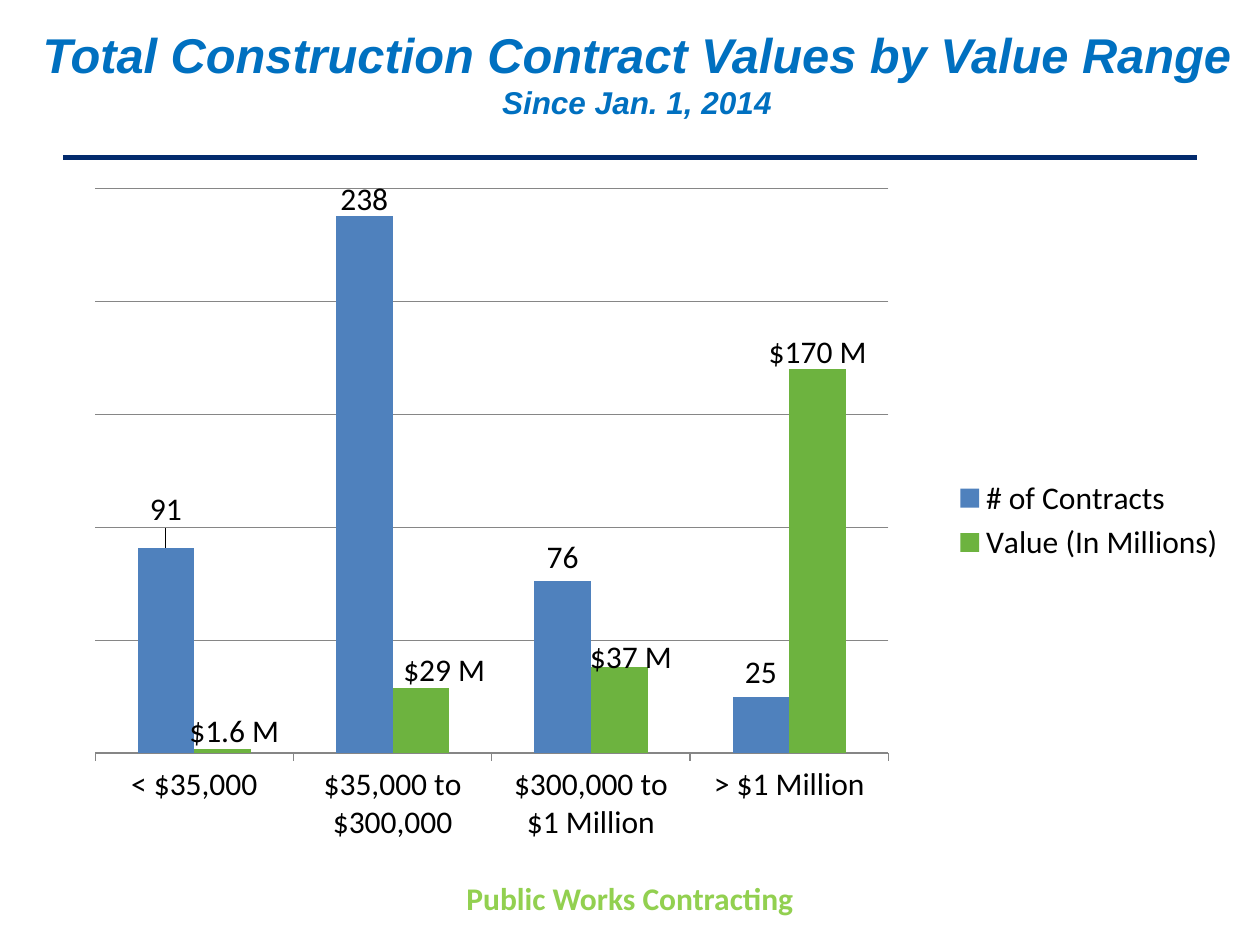
from lxml.etree import SubElement
from pptx import Presentation
from pptx.chart.data import CategoryChartData
from pptx.dml.color import RGBColor
from pptx.enum.chart import XL_CHART_TYPE, XL_LABEL_POSITION, XL_LEGEND_POSITION, XL_TICK_LABEL_POSITION, XL_TICK_MARK
from pptx.enum.shapes import MSO_CONNECTOR
from pptx.enum.text import MSO_ANCHOR, PP_ALIGN
from pptx.oxml.ns import qn
from pptx.util import Inches, Pt

CATEGORIES = ["< $35,000", "$35,000 to $300,000", "$300,000 to $1 Million", "> $1 Million"]
# Each label: text, horizontal and vertical shift as a share of the chart
SERIES = [
    ("# of Contracts", "4F81BD", [91, 238, 76, 25],
     [("91", 0, -0.02), ("238", 0, 0.01), ("76", 0, 0), ("25", 0, 0)]),
    ("Value (In Millions)", "6DB33F", [2, 29, 38, 170],
     [("$1.6 M", 0.01, 0.01), ("$29 M", 0.02, 0.01), ("$37 M", 0.01, 0.02), ("$170 M", 0, 0.01)]),
]


def rgb(value):
    return RGBColor.from_string(value)


def manual_layout(layout, **values):
    """Fill a c:layout element with manual positions."""
    manual = SubElement(layout, qn("c:manualLayout"))
    for tag, value in values.items():
        SubElement(manual, qn(f"c:{tag}")).set("val", str(value))


class SlideBuilder:
    TITLE = dict(name="Arial", size=Pt(27.9), bold=True, italic=True, color="0070C0")
    SUBTITLE = {**TITLE, "size": Pt(18)}
    FOOTER = dict(name="Calibri", size=Pt(18), bold=True, color="92D050")
    CHART = dict(name="Calibri", size=Pt(18), bold=False, color="000000")
    RULE, AXIS = "032B6D", "868686"

    def __init__(self, slide):
        self.s = slide

    def style(self, font, fmt):
        for key, value in fmt.items():
            if key == "color":
                font.color.rgb = rgb(value)
            else:
                setattr(font, key, value)

    def run(self, p, text, fmt):
        r = p.add_run()
        r.text = text
        self.style(r.font, fmt)

    def title(self, x, y, w, h, text, subtitle):
        sp = self.s.shapes.title
        sp.left, sp.top, sp.width, sp.height = map(Inches, (x, y, w, h))
        tf = sp.text_frame
        tf.vertical_anchor = MSO_ANCHOR.MIDDLE
        p = tf.paragraphs[0]
        p.alignment = PP_ALIGN.CENTER
        self.run(p, text, self.TITLE)
        p.add_line_break()
        self.run(p, subtitle, self.SUBTITLE)

    def rule(self, x1, x2, y):
        line = self.s.shapes.add_connector(
            MSO_CONNECTOR.STRAIGHT, Inches(x1), Inches(y), Inches(x2), Inches(y))
        line.line.color.rgb = rgb(self.RULE)
        line.line.width = Pt(3)
        SubElement(line._element.spPr, qn("a:effectLst"))

    def text(self, x, y, w, h, text):
        tf = self.s.shapes.add_textbox(*map(Inches, (x, y, w, h))).text_frame
        tf.word_wrap = True
        p = tf.paragraphs[0]
        p.alignment = PP_ALIGN.CENTER
        self.run(p, text, self.FOOTER)

    def label(self, point, text, dx, dy):
        label = point.data_label
        self.run(label.text_frame.paragraphs[0], text, self.CHART)
        label.position = XL_LABEL_POSITION.OUTSIDE_END
        if dx or dy:
            dlbl = label._dLbl
            layout = SubElement(dlbl, qn("c:layout"))
            dlbl.insert(1, layout)
            manual_layout(layout, x=dx, y=dy)

    def axes(self, chart):
        value, category = chart.value_axis, chart.category_axis
        value.minimum_scale, value.maximum_scale, value.major_unit = 0, 250, 50
        value.has_major_gridlines = True
        value.visible = False
        category.major_tick_mark = XL_TICK_MARK.OUTSIDE
        category.tick_label_position = XL_TICK_LABEL_POSITION.LOW
        for line in (value.major_gridlines.format.line, category.format.line):
            line.color.rgb = rgb(self.AXIS)
            line.width = Pt(0.75)

    def column_chart(self, x, y, w, h):
        data = CategoryChartData()
        data.categories = CATEGORIES
        for name, _, values, _ in SERIES:
            data.add_series(name, values)
        chart = self.s.shapes.add_chart(
            XL_CHART_TYPE.COLUMN_CLUSTERED, *map(Inches, (x, y, w, h)), data).chart
        self.style(chart.font, self.CHART)
        chart.has_title = False
        chart.has_legend = True
        chart.legend.position = XL_LEGEND_POSITION.RIGHT
        chart.legend.include_in_layout = False
        self.axes(chart)

        plot = chart.plots[0]
        plot.gap_width, plot.overlap = 150, 0
        plot.vary_by_categories = False
        for series, (_, color, _, labels) in zip(plot.series, SERIES):
            series.format.fill.solid()
            series.format.fill.fore_color.rgb = rgb(color)
            series.data_labels.show_value = True
            series.data_labels.position = XL_LABEL_POSITION.OUTSIDE_END
            for i, label in enumerate(labels):
                self.label(series.points[i], *label)

        area = chart._chartSpace.chart.plotArea
        layout = area.find(qn("c:layout"))
        if layout is None:
            layout = SubElement(area, qn("c:layout"))
            area.insert(0, layout)
        manual_layout(layout, layoutTarget="inner", xMode="edge", yMode="edge",
                      x=0.02, y=0.03, w=0.68, h=0.8)


def main():
    prs = Presentation()
    prs.slide_width, prs.slide_height = Inches(10), Inches(7.5)
    builder = SlideBuilder(prs.slides.add_slide(prs.slide_layouts[5]))
    builder.rule(0.5, 9.5, 1.25)
    builder.title(0.2, 0.08, 9.71, 1,
                  "Total Construction Contract Values by Value Range", "Since Jan. 1, 2014")
    builder.text(0, 6.93, 10, 0.4, "Public Works Contracting")
    builder.column_chart(0.57, 1.33, 9.26, 5.6)
    prs.save("out.pptx")


if __name__ == "__main__":
    main()
